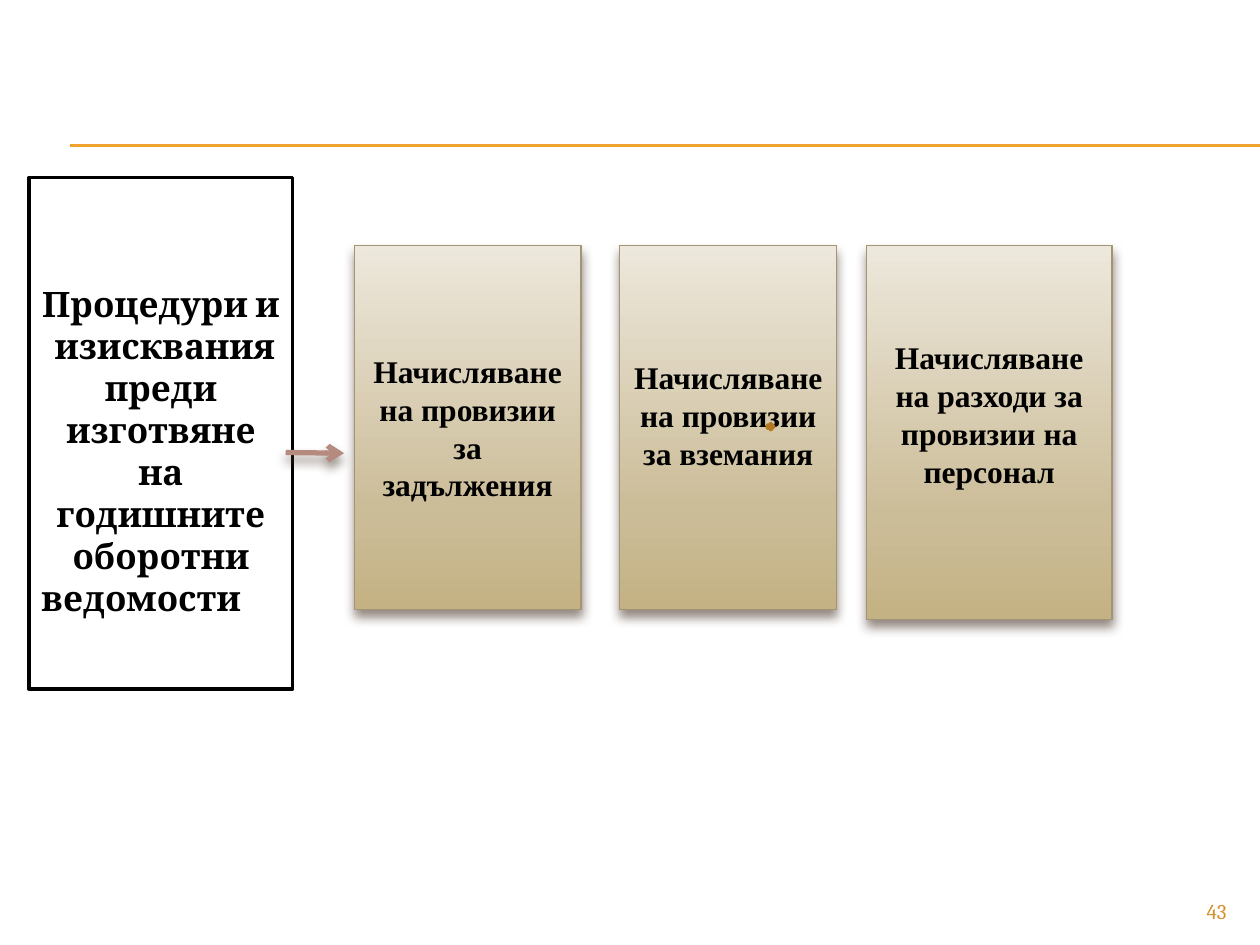
from lxml import etree
from pptx import Presentation
from pptx.dml.color import RGBColor
from pptx.enum import shapes as sh, text as tx
from pptx.oxml import ns
from pptx.util import Pt

GOLD = RGBColor(0xF0, 0xA2, 0x2E)
OCHRE = RGBColor(0xB2, 0x78, 0x22)
AMBER = RGBColor(0xD4, 0x8F, 0x29)
ROSE = RGBColor(0xB5, 0x8B, 0x80)
OLIVE = RGBColor(0xA1, 0x95, 0x74)
BROWN = RGBColor(0x4E, 0x3B, 0x30)
BLACK = RGBColor(0, 0, 0)
WHITE = RGBColor(0xFF, 0xFF, 0xFF)
SAND = [(0, RGBColor(0xED, 0xE8, 0xDC)),
        (72, RGBColor(0xCC, 0xBD, 0x99)),
        (100, RGBColor(0xC4, 0xB2, 0x84))]

# Left, width, height and the space kept under the text
CARDS = [
    ("Начисляване на провизии за задължения", 202.5, 129.5, 208, 3.6),
    ("Начисляване на провизии за вземания", 354.2, 124, 208, 18),
    ("Начисляване на разходи за провизии на персонал", 495, 140.5, 213.7, 25),
]


def sub(node, tag, **attrs):
    return etree.SubElement(node, ns.qn("a:" + tag), **attrs)


def shade(shape, on=True):
    """Give the shape a soft shadow below it, or none at all."""
    fx = sub(shape._element.spPr, "effectLst")
    if on:
        drop = sub(fx, "outerShdw", blurRad=str(Pt(6)), dist=str(Pt(4)),
                   dir="5400000", rotWithShape="0")
        tone = sub(drop, "srgbClr", val=str(BROWN))
        sub(tone, "alpha", val="60000")


def blend(shape, stops):
    """Fill the shape with a gradient running from top to bottom."""
    shape.fill.gradient()
    shape.fill.gradient_angle = 270
    group = shape._element.spPr.find(".//" + ns.qn("a:gsLst"))
    for old in list(group):
        group.remove(old)
    for pos, tone in stops:
        stop = sub(group, "gs", pos=str(pos * 1000))
        sub(stop, "srgbClr", val=str(tone))


def box(slide, kind, x, y, w, h, edge, width):
    shape = slide.shapes.add_shape(kind, Pt(x), Pt(y), Pt(w), Pt(h))
    shape.line.color.rgb = edge
    shape.line.width = Pt(width)
    return shape


def line(slide, x1, y1, x2, y2, tone, width):
    rule = slide.shapes.add_connector(
        sh.MSO_CONNECTOR.STRAIGHT, Pt(x1), Pt(y1), Pt(x2), Pt(y2))
    rule.line.color.rgb = tone
    rule.line.width = Pt(width)
    return rule


def write(shape, words, font, size, tone, align, bold=True):
    frame = shape.text_frame
    frame.word_wrap = True
    para = frame.paragraphs[0]
    para.text = words
    para.alignment = align
    para.font.name = font
    para.font.size = Pt(size)
    para.font.bold = bold
    para.font.color.rgb = tone
    return frame


def rules(slide, x, y, w):
    for top in (y, y + 0.7):
        shade(line(slide, x, top, x + w, top, GOLD, 0.75), on=False)


def card(slide, words, x, y, w, h, under):
    shape = box(slide, sh.MSO_SHAPE.RECTANGLE, x, y, w, h, OLIVE, 0.79)
    blend(shape, SAND)
    shade(shape)
    frame = write(shape, words, "Times New Roman", 18, BLACK,
                  tx.PP_ALIGN.CENTER)
    frame.vertical_anchor = tx.MSO_ANCHOR.MIDDLE
    frame.margin_bottom = Pt(under)


def topic(slide, x, y, w, h):
    shape = box(slide, sh.MSO_SHAPE.RECTANGLE, x, y, w, h, BLACK, 2)
    shape.fill.solid()
    shape.fill.fore_color.rgb = WHITE
    shape.shadow.inherit = False
    words = ("Процедури и  изисквания преди изготвяне на годишните "
             "оборотни ведомости \t")
    frame = write(shape, words, "Cambria", 20, BLACK, tx.PP_ALIGN.CENTER)
    frame.vertical_anchor = tx.MSO_ANCHOR.TOP
    frame.margin_top = Pt(60)


def arrow(slide, x, y, w):
    link = line(slide, x, y, x + w, y + 0.4, ROSE, 3)
    sub(link._element.spPr.find(ns.qn("a:ln")), "tailEnd", type="arrow")
    shade(link)


def mark(slide, x, y, size):
    shape = box(slide, sh.MSO_SHAPE.RIGHT_ARROW, x, y, size, size, OCHRE, 2)
    shape.fill.solid()
    shape.fill.fore_color.rgb = GOLD
    shape.shadow.inherit = False


def number(slide, x, y, w, h):
    shape = slide.shapes.add_textbox(Pt(x), Pt(y), Pt(w), Pt(h))
    write(shape, "43", "Cambria", 12, AMBER, tx.PP_ALIGN.RIGHT, bold=False)


def main():
    deck = Presentation()
    deck.slide_width, deck.slide_height = Pt(720), Pt(540)
    slide = deck.slides.add_slide(deck.slide_layouts[6])

    # Double rule under the heading area
    rules(slide, 40.3, 82.8, 679.7)

    # Provision cards
    for words, x, w, h, under in CARDS:
        card(slide, words, x, 140.4, w, h, under)

    # Topic box with its arrow
    topic(slide, 16.6, 101.4, 150.7, 292.3)
    arrow(slide, 163.3, 258.6, 33.3)

    # Small marker and slide number
    mark(slide, 438.5, 242, 3.6)
    number(slide, 648, 509.8, 60, 19.4)
    deck.save("out.pptx")


if __name__ == "__main__":
    main()
